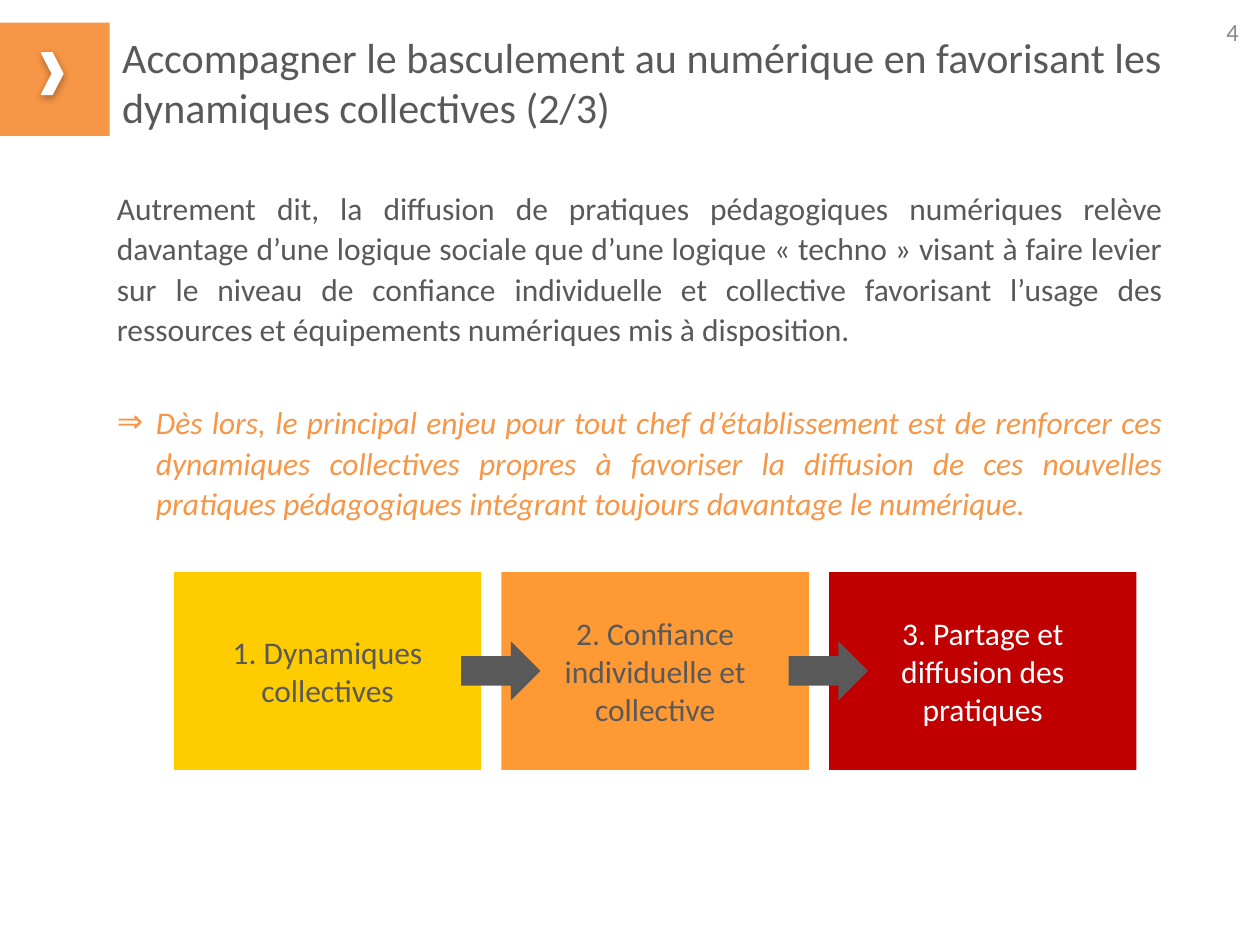
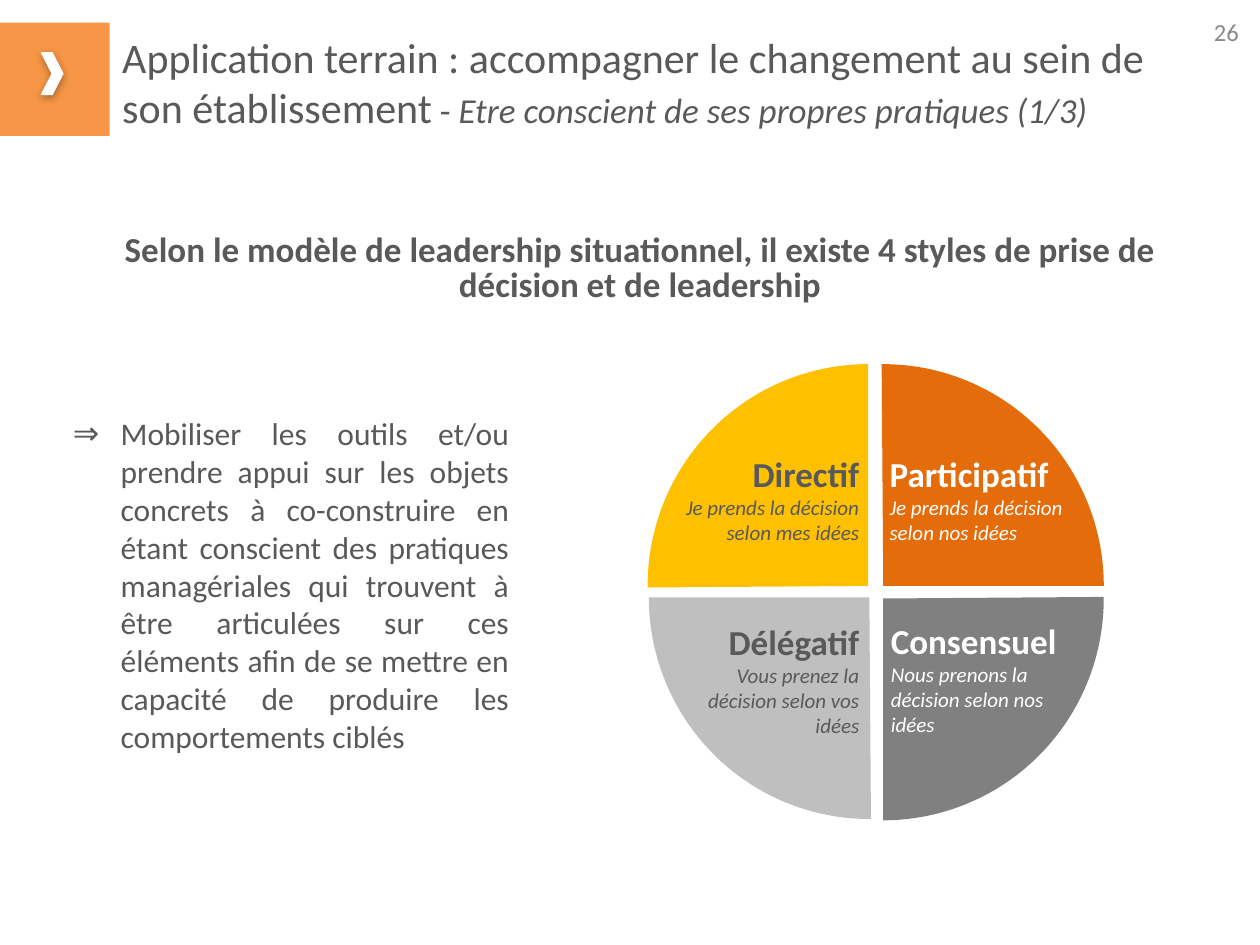
"""Build two slides on leading the move to digital teaching in a school."""
from lxml import etree
from pptx import Presentation
from pptx.dml.color import RGBColor
from pptx.enum.shapes import MSO_SHAPE
from pptx.enum.text import MSO_ANCHOR, PP_ALIGN
from pptx.oxml import parse_xml
from pptx.oxml.ns import nsdecls, qn
from pptx.util import Inches, Pt

RECTANGLE, CHEVRON = MSO_SHAPE.RECTANGLE, MSO_SHAPE.CHEVRON
ARROW, PIE = MSO_SHAPE.RIGHT_ARROW, MSO_SHAPE.PIE
TOP, MIDDLE = MSO_ANCHOR.TOP, MSO_ANCHOR.MIDDLE
LEFT, CENTER = PP_ALIGN.LEFT, PP_ALIGN.CENTER
RIGHT, JUSTIFY = PP_ALIGN.RIGHT, PP_ALIGN.JUSTIFY
FONT = "Calibri"
ORANGE, DARK, PALE, WHITE = "F79646", "595959", "898989", "FFFFFF"


def add_block(slide, kind, box, fill):
    block = slide.shapes.add_shape(kind, *map(Inches, box))
    block.fill.solid()
    block.fill.fore_color.rgb = RGBColor.from_string(fill)
    block.line.fill.background()
    block.shadow.inherit = False
    return block


def write(shape, text, size, colour, align=LEFT, anchor=MIDDLE, inset=0.1):
    frame = shape.text_frame
    frame.word_wrap = True
    frame.vertical_anchor = anchor
    frame.margin_left = frame.margin_right = Inches(inset)
    frame.margin_top = frame.margin_bottom = Inches(0.05)
    frame.text = text
    for paragraph in frame.paragraphs:
        paragraph.alignment = align
        for run in paragraph.runs:
            run.font.name = FONT
            run.font.size = Pt(size)
            run.font.color.rgb = RGBColor.from_string(colour)
    return frame.paragraphs


prs = Presentation()
prs.slide_width, prs.slide_height = Inches(10), Inches(7.5)

headers = [
    ("4", "Accompagner le basculement au numérique en favorisant les dynamiques collectives (2/3)", []),
    ("26", "Application terrain : accompagner le changement au sein de son établissement",
     [(" - ", False), ("Etre conscient de ses propres pratiques (1/3)", True)]),
]
for number, title, subtitle in headers:
    slide = prs.slides.add_slide(prs.slide_layouts[6])
    add_block(slide, RECTANGLE, (0, 0.18, 0.87, 0.9), ORANGE)
    chevron = add_block(slide, CHEVRON, (0.33, 0.42, 0.17, 0.33), WHITE)
    chevron.line.color.rgb = RGBColor.from_string(WHITE)
    chevron.line.width = Pt(0.75)
    chevron.element.spPr.find(qn("a:effectLst")).append(parse_xml(
        f'<a:outerShdw {nsdecls("a")} blurRad="{Pt(5)}" dist="{Pt(1.8)}" dir="5400000" rotWithShape="0">'
        '<a:srgbClr val="000000"><a:alpha val="35000"/></a:srgbClr></a:outerShdw>'))
    heading = slide.shapes.add_textbox(*map(Inches, (0.88, 0.2, 8.45, 0.9)))
    heading_line = write(heading, title, 24, DARK, inset=0.09)[0]
    for part, italic in subtitle:
        run = heading_line.add_run()
        run.text = part
        run.font.name = FONT
        run.font.size = Pt(20)
        run.font.italic = italic
        run.font.color.rgb = RGBColor.from_string(DARK)
    page = slide.shapes.add_textbox(*map(Inches, (7.6, 0.05, 2.33, 0.4)))
    write(page, number, 14, PALE, RIGHT)

dynamics, styles = prs.slides

argument = dynamics.shapes.add_textbox(*map(Inches, (0.83, 1.43, 8.5, 3.35)))
reason, challenge = write(
    argument,
    "Autrement dit, la diffusion de pratiques pédagogiques numériques relève davantage d’une logique "
    "sociale que d’une logique « techno » visant à faire levier sur le niveau de confiance individuelle "
    "et collective favorisant l’usage des ressources et équipements numériques mis à disposition.\n"
    "Dès lors, le principal enjeu pour tout chef d’établissement est de renforcer ces dynamiques "
    "collectives propres à favoriser la diffusion de ces nouvelles pratiques pédagogiques intégrant "
    "toujours davantage le numérique.", 18, DARK, JUSTIFY, TOP)
reason.line_spacing = challenge.line_spacing = 1.07
reason.space_after = Pt(30)
challenge.runs[0].font.italic = True
challenge.runs[0].font.color.rgb = RGBColor.from_string(ORANGE)

steps = [
    ("1. Dynamiques collectives", "FFCC00", DARK),
    ("2. Confiance individuelle et collective", "FF9933", DARK),
    ("3. Partage et diffusion des pratiques", "C00000", WHITE),
]
step_left, step_pitch = 1.38, 2.6
for i, (label, fill, ink) in enumerate(steps):
    step = add_block(dynamics, RECTANGLE, (step_left + i * step_pitch, 4.54, 2.44, 1.57), fill)
    write(step, label, 18, ink, CENTER, inset=0.16)
for i in range(len(steps) - 1):
    add_block(dynamics, ARROW, (step_left + i * step_pitch + 2.28, 5.09, 0.63, 0.47), DARK)

model = styles.shapes.add_textbox(*map(Inches, (0.83, 1.86, 8.5, 0.56)))
claim = write(model, "Selon le modèle de leadership situationnel, il existe 4 styles de prise de "
              "décision et de leadership", 20, DARK, CENTER, inset=0)[0]
claim.line_spacing = Pt(20)
claim.runs[0].font.bold = True

quarters = [
    (0, (5.14, 2.89, 3.5, 3.52), "FFC000"),
    (180, (5.26, 2.99, 3.5, 3.52), "808080"),
    (270, (5.14, 2.99, 3.52, 3.5), "BFBFBF"),
    (90, (5.25, 2.9, 3.52, 3.5), "E46C0A"),
]
for turn, box, fill in quarters:
    quarter = add_block(styles, PIE, box, fill)
    quarter.adjustments[0], quarter.adjustments[1] = 107.75, 162
    quarter.rotation = turn

leaderships = [
    ("Directif", "Je prends la décision selon mes idées", (5.41, 3.63, 1.41, 0.65), DARK, RIGHT),
    ("Délégatif", "Vous prenez la décision selon vos idées", (5.41, 4.79, 1.41, 1.2), DARK, RIGHT),
    ("Participatif", "Je prends la décision selon nos idées", (7.06, 3.63, 1.55, 0.65), WHITE, LEFT),
    ("Consensuel", "Nous prenons la décision selon nos idées", (7.07, 4.78, 1.55, 1.2), WHITE, LEFT),
]
for name, motto, box, ink, align in leaderships:
    caption = styles.shapes.add_textbox(*map(Inches, box))
    name_line, motto_line = write(caption, f"{name}\n{motto}", 20, ink, align, inset=0)
    name_line.runs[0].font.bold = True
    motto_line.runs[0].font.size = Pt(12)
    motto_line.runs[0].font.italic = True

advice = styles.shapes.add_textbox(*map(Inches, (0.48, 3.24, 3.66, 2.91)))
tools = write(
    advice,
    "Mobiliser les outils et/ou prendre appui sur les objets concrets à co-construire en étant "
    "conscient des pratiques managériales qui trouvent à être articulées sur ces éléments afin de "
    "se mettre en capacité de produire les comportements ciblés", 18, DARK, JUSTIFY, TOP)[0]

for point, indent in [(challenge, 0.31), (tools, 0.38)]:
    properties = point._p.get_or_add_pPr()
    properties.set("marL", str(Inches(indent)))
    properties.set("indent", str(-Inches(indent)))
    etree.SubElement(properties, qn("a:buFont"), typeface=FONT)
    etree.SubElement(properties, qn("a:buChar"), char="⇒")

prs.save("out.pptx")
